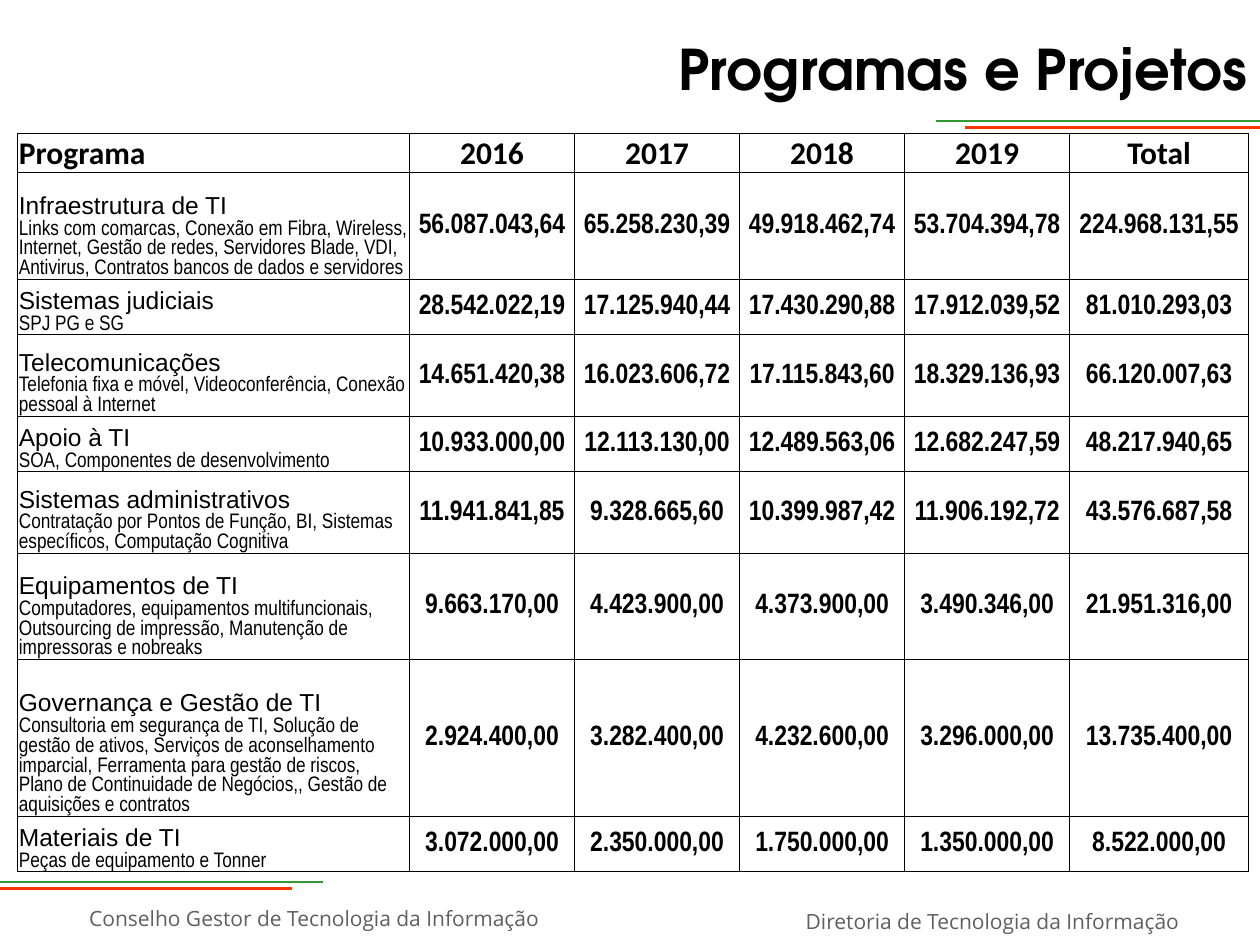
import dataclasses

import lxml.etree
import pptx
import pptx.dml.color
import pptx.enum.shapes
import pptx.enum.text
import pptx.oxml.ns
import pptx.util

Inches = pptx.util.Inches
Align = pptx.enum.text.PP_ALIGN
Anchor = pptx.enum.text.MSO_ANCHOR


@dataclasses.dataclass(frozen=True)
class TextStyle:
    font: str
    size: int
    color: str = "000000"
    bold: bool = False


@dataclasses.dataclass(frozen=True)
class Theme:
    title = TextStyle("TeX Gyre Adventor", 32, bold=True)
    header = TextStyle("Calibri", 18, bold=True)
    program = TextStyle("Arial", 14)
    detail = TextStyle("Arial Narrow", 12)
    amount = TextStyle("Arial Narrow", 16, bold=True)
    footer = TextStyle("Open Sans", 12, "5F5F5F")
    green = "339933"
    red = "FF3300"
    border = "000000"
    rule_width = 1.5
    border_width = 0.5


THEME = Theme()
SLIDE_WIDTH, SLIDE_HEIGHT = 10, 7.5
TABLE_LEFT, TABLE_TOP = 0.14, 1.06
COLUMN_WIDTHS = [3.11] + [1.31] * 4 + [1.42]
HEADER_HEIGHT = 0.31
NAME_HEIGHT, DETAIL_LINE_HEIGHT = 0.24, 0.2

HEADINGS = ["Programa", "2016", "2017", "2018", "2019", "Total"]
# Program, detail, lines the detail takes, amounts
PROGRAMS = [
    ("Infraestrutura de TI",
     "Links com comarcas, Conexão em Fibra, Wireless, Internet, Gestão de redes, "
     "Servidores Blade, VDI, Antivirus, Contratos bancos de dados e servidores", 3,
     ["56.087.043,64", "65.258.230,39", "49.918.462,74", "53.704.394,78", "224.968.131,55"]),
    ("Sistemas judiciais", "SPJ PG e SG", 1,
     ["28.542.022,19", "17.125.940,44", "17.430.290,88", "17.912.039,52", "81.010.293,03"]),
    ("Telecomunicações",
     "Telefonia fixa e móvel, Videoconferência, Conexão pessoal à Internet", 2,
     ["14.651.420,38", "16.023.606,72", "17.115.843,60", "18.329.136,93", "66.120.007,63"]),
    ("Apoio à TI", "SOA, Componentes de desenvolvimento", 1,
     ["10.933.000,00", "12.113.130,00", "12.489.563,06", "12.682.247,59", "48.217.940,65"]),
    ("Sistemas administrativos",
     "Contratação por Pontos de Função, BI, Sistemas específicos, Computação Cognitiva", 2,
     ["11.941.841,85", "9.328.665,60", "10.399.987,42", "11.906.192,72", "43.576.687,58"]),
    ("Equipamentos de TI",
     "Computadores, equipamentos multifuncionais, Outsourcing de impressão, "
     "Manutenção de impressoras e nobreaks", 3,
     ["9.663.170,00", "4.423.900,00", "4.373.900,00", "3.490.346,00", "21.951.316,00"]),
    ("Governança e Gestão de TI",
     "Consultoria em segurança de TI, Solução de gestão de ativos, Serviços de "
     "aconselhamento imparcial, Ferramenta para gestão de riscos, Plano de "
     "Continuidade de Negócios,, Gestão de aquisições e contratos", 5,
     ["2.924.400,00", "3.282.400,00", "4.232.600,00", "3.296.000,00", "13.735.400,00"]),
    ("Materiais de TI", "Peças de equipamento e Tonner", 1,
     ["3.072.000,00", "2.350.000,00", "1.750.000,00", "1.350.000,00", "8.522.000,00"]),
]


def rgb(color):
    return pptx.dml.color.RGBColor.from_string(color)


def write_lines(frame, lines, align):
    """Fill a text frame with one paragraph for each (text, style) pair."""
    frame.text = "\n".join(text for text, _ in lines)
    frame.word_wrap = True
    for para, (_, style) in zip(frame.paragraphs, lines):
        para.alignment = align
        for span in para.runs:
            span.font.name = style.font
            span.font.size = pptx.util.Pt(style.size)
            span.font.bold = style.bold
            span.font.color.rgb = rgb(style.color)


def place(shape, left, top, width, height):
    shape.left, shape.top = Inches(left), Inches(top)
    shape.width, shape.height = Inches(width), Inches(height)


def add_title(page, text):
    title = page.shapes.title
    place(title, 1.01, 0.25, SLIDE_WIDTH - 1.01, 0.58)
    write_lines(title.text_frame, [(text, THEME.title)], Align.RIGHT)
    title.text_frame.vertical_anchor = Anchor.MIDDLE


def add_footer(page, text, left, top, width, align):
    box = page.shapes.add_textbox(*map(Inches, (left, top, width, 0.31)))
    write_lines(box.text_frame, [(text, THEME.footer)], align)


def add_rule(page, start, end, y, color):
    rule = page.shapes.add_connector(
        pptx.enum.shapes.MSO_CONNECTOR.STRAIGHT, *map(Inches, (start, y, end, y)))
    rule.line.color.rgb = rgb(color)
    rule.line.width = pptx.util.Pt(THEME.rule_width)
    lxml.etree.SubElement(rule._element.spPr, pptx.oxml.ns.qn("a:effectLst"))


def add_borders(cell):
    qn = pptx.oxml.ns.qn
    properties = cell._tc.get_or_add_tcPr()
    for side in ("a:lnL", "a:lnR", "a:lnT", "a:lnB"):
        line = lxml.etree.SubElement(properties, qn(side))
        line.set("w", str(pptx.util.Pt(THEME.border_width)))
        fill = lxml.etree.SubElement(line, qn("a:solidFill"))
        lxml.etree.SubElement(fill, qn("a:srgbClr")).set("val", THEME.border)


def fill_cell(cell, lines, align, anchor):
    add_borders(cell)
    cell.fill.background()
    cell.margin_left = cell.margin_right = cell.margin_top = Inches(0.01)
    cell.margin_bottom = 0
    cell.vertical_anchor = anchor
    write_lines(cell.text_frame, lines, align)


def add_program_table(page):
    heights = [HEADER_HEIGHT] + [
        NAME_HEIGHT + DETAIL_LINE_HEIGHT * count for _, _, count, _ in PROGRAMS]
    frame = page.shapes.add_table(
        len(heights), len(COLUMN_WIDTHS),
        *map(Inches, (TABLE_LEFT, TABLE_TOP, sum(COLUMN_WIDTHS), sum(heights))))
    table = frame.table
    table.horz_banding = False
    for column, width in zip(table.columns, COLUMN_WIDTHS):
        column.width = Inches(width)
    for row, height in zip(table.rows, heights):
        row.height = Inches(height)

    for index, heading in enumerate(HEADINGS):
        align = Align.CENTER if index else Align.LEFT
        fill_cell(table.cell(0, index), [(heading, THEME.header)], align, Anchor.BOTTOM)
    for row, (name, detail, _, amounts) in enumerate(PROGRAMS, 1):
        lines = [(name, THEME.program), (detail, THEME.detail)]
        fill_cell(table.cell(row, 0), lines, Align.LEFT, Anchor.BOTTOM)
        for column, amount in enumerate(amounts, 1):
            fill_cell(table.cell(row, column), [(amount, THEME.amount)],
                      Align.CENTER, Anchor.MIDDLE)


def main():
    deck = pptx.Presentation()
    deck.slide_width, deck.slide_height = Inches(SLIDE_WIDTH), Inches(SLIDE_HEIGHT)
    page = deck.slides.add_slide(deck.slide_layouts.get_by_name("Title Only"))

    add_rule(page, 0, 2.56, 7, THEME.green)
    add_rule(page, 0, 2.32, 7.05, THEME.red)
    add_rule(page, 7.43, SLIDE_WIDTH, 0.96, THEME.green)
    add_rule(page, 7.66, SLIDE_WIDTH, 1.01, THEME.red)
    add_footer(page, "Conselho Gestor de Tecnologia da Informação", 0.61, 7.14, 4.08, Align.LEFT)
    add_footer(page, "Diretoria de Tecnologia da Informação", 6.24, 7.16, 3.22, Align.RIGHT)
    add_title(page, "Programas e Projetos")
    add_program_table(page)

    deck.save("out.pptx")


if __name__ == "__main__":
    main()
